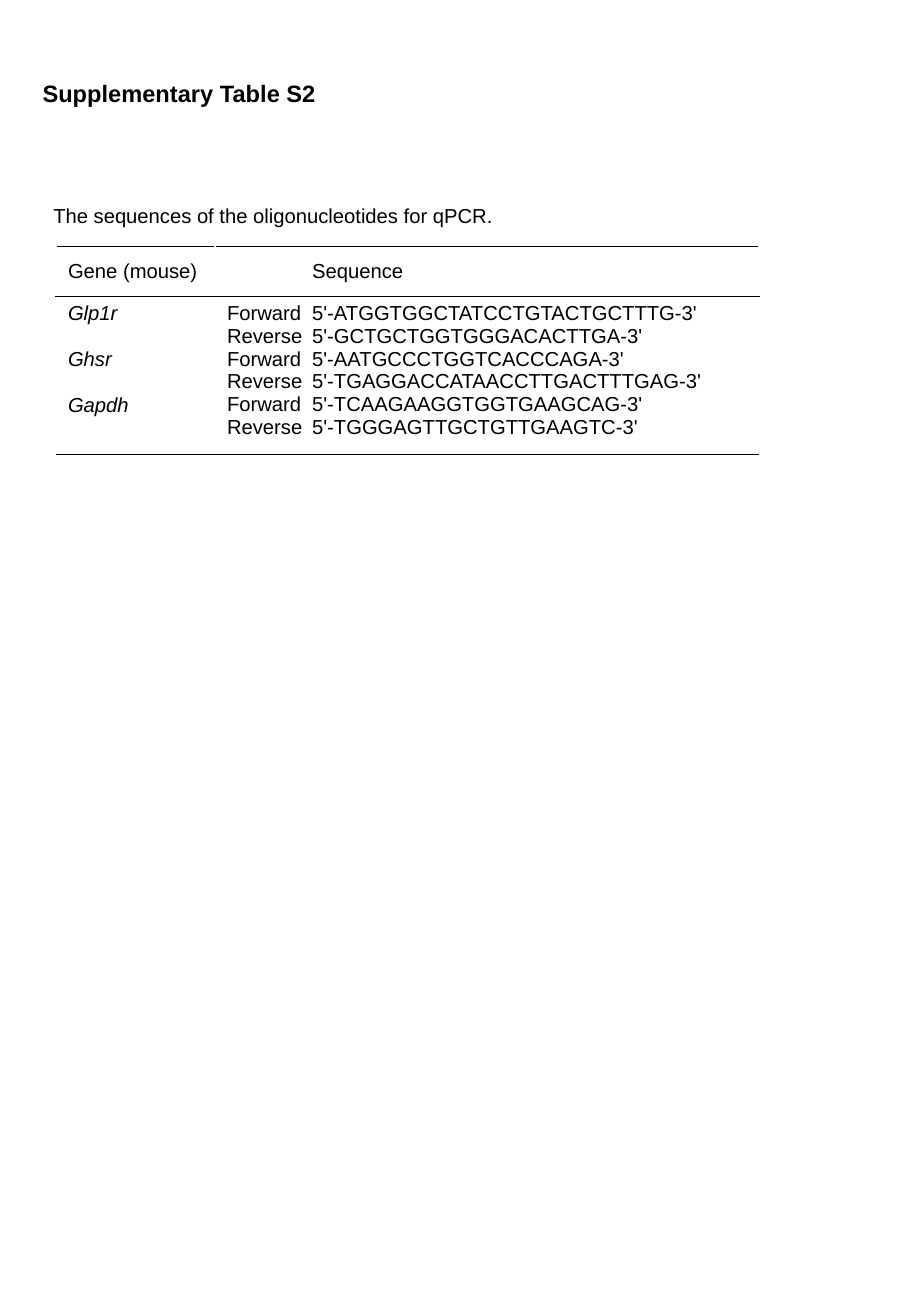
from lxml.etree import SubElement
from pptx import Presentation
from pptx.dml.color import RGBColor
from pptx.enum.text import MSO_ANCHOR, MSO_AUTO_SIZE, PP_ALIGN
from pptx.oxml.ns import qn
from pptx.util import Inches, Pt

# Content
TITLE = "Supplementary Table S2"
CAPTION = "The sequences of the oligonucleotides for qPCR."
HEADERS = ("Gene (mouse)", "Sequence")
PRIMERS = {
    "Glp1r": ("5'-ATGGTGGCTATCCTGTACTGCTTTG-3'", "5'-GCTGCTGGTGGGACACTTGA-3'"),
    "Ghsr": ("5'-AATGCCCTGGTCACCCAGA-3'", "5'-TGAGGACCATAACCTTGACTTTGAG-3'"),
    "Gapdh": ("5'-TCAAGAAGGTGGTGAAGCAG-3'", "5'-TGGGAGTTGCTGTTGAAGTC-3'"),
}
DIRECTIONS = ("Forward", "Reverse")

# Style and layout
FONT = "Arial"
BLACK = RGBColor(0, 0, 0)
WHITE = RGBColor(255, 255, 255)
COLUMN_WIDTHS = (1.31, 4.48)
ROW_HEIGHTS = (0.41, 1.3)
SEQUENCE_INDENT = Inches(0.7)
LINE_HEIGHT = Pt(13.7)

# Border sides as (colour, points); None means no line
HEADER_BORDERS = {"L": (WHITE, 1), "R": (WHITE, 1), "T": (BLACK, 1), "B": (BLACK, 0.5)}
BODY_BORDERS = {"L": None, "R": None, "T": (BLACK, 0.5), "B": (BLACK, 0.5)}


def write_lines(frame, lines, size=12, bold=False, italic=False):
    for index, line in enumerate(lines):
        para = frame.add_paragraph() if index else frame.paragraphs[0]
        para.text = line
        para.alignment = PP_ALIGN.LEFT
        font = para.font
        font.name, font.size, font.bold, font.italic = FONT, Pt(size), bold, italic
        font.color.rgb = BLACK


def fit_box(box, left, top, width, height):
    box.left, box.top, box.width, box.height = map(Inches, (left, top, width, height))
    frame = box.text_frame
    frame.word_wrap = False
    frame.auto_size = MSO_AUTO_SIZE.SHAPE_TO_FIT_TEXT
    frame.vertical_anchor = MSO_ANCHOR.TOP
    return frame


def set_borders(cell, borders):
    properties = cell._tc.get_or_add_tcPr()
    for side, border in borders.items():
        line = SubElement(properties, qn(f"a:ln{side}"))
        if border is None:
            line.set("w", "0")
            SubElement(line, qn("a:noFill"))
        else:
            color, points = border
            line.set("w", str(Pt(points)))
            fill = SubElement(line, qn("a:solidFill"))
            SubElement(fill, qn("a:srgbClr")).set("val", str(color))


deck = Presentation()
deck.slide_width, deck.slide_height = Inches(7.5), Inches(10.83)
page = deck.slides.add_slide(deck.slide_layouts[5])

# Title and caption
title_frame = fit_box(page.shapes.title, 0.25, 0.6, 2.46, 0.34)
write_lines(title_frame, [TITLE], size=14, bold=True)
caption_box = page.shapes.add_textbox(0, 0, 0, 0)
write_lines(fit_box(caption_box, 0.34, 1.62, 3.85, 0.3), [CAPTION])

# Table frame
table = page.shapes.add_table(
    2, 2, Inches(0.46), Inches(2.03),
    Inches(sum(COLUMN_WIDTHS)), Inches(sum(ROW_HEIGHTS))).table
table.first_row = table.horz_banding = False
for column, width in zip(table.columns, COLUMN_WIDTHS):
    column.width = Inches(width)
for row, height, borders in zip(table.rows, ROW_HEIGHTS, (HEADER_BORDERS, BODY_BORDERS)):
    row.height = Inches(height)
    for cell in row.cells:
        set_borders(cell, borders)
        cell.fill.background()

# Header row
for column, header in enumerate(HEADERS):
    cell = table.cell(0, column)
    cell.vertical_anchor = MSO_ANCHOR.MIDDLE
    write_lines(cell.text_frame, [header])
table.cell(0, 1).margin_left = Inches(0.1) + SEQUENCE_INDENT

# Each gene spans two sequence lines
gene_frame = table.cell(1, 0).text_frame
write_lines(gene_frame, PRIMERS, italic=True)
for para in gene_frame.paragraphs:
    para.space_after = LINE_HEIGHT

# Directions and sequences, aligned by a tab stop
sequence_frame = table.cell(1, 1).text_frame
write_lines(sequence_frame, [
    f"{direction}\t{sequence}"
    for pair in PRIMERS.values()
    for direction, sequence in zip(DIRECTIONS, pair)])
for para in sequence_frame.paragraphs:
    properties = para._p.get_or_add_pPr()
    tabs = properties.makeelement(qn("a:tabLst"))
    SubElement(tabs, qn("a:tab"), pos=str(SEQUENCE_INDENT), algn="l")
    properties.insert(0, tabs)

deck.save("out.pptx")
